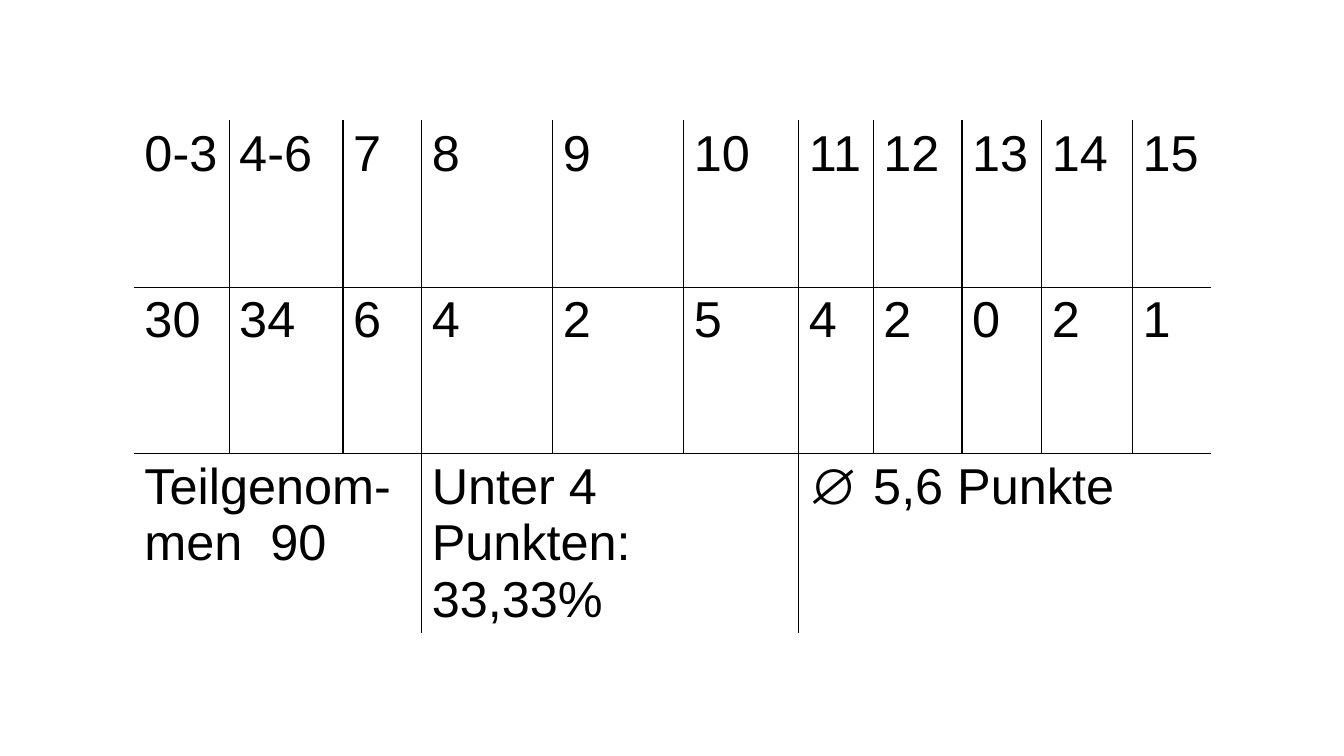
"""Build a slide with the table of points reached and its summary row."""
from lxml import etree
from pptx import Presentation
from pptx import util as u
from pptx.dml.color import RGBColor
from pptx.oxml.ns import qn

COLORS = {"ink": "000000", "paper": "FFFFFF"}
FONT = {"name": "Arial", "size": u.Pt(36), "bold": False}
ROWS = [
    [(points, 1) for points in "0-3 4-6 7 8 9 10 11 12 13 14 15".split()],
    [(count, 1) for count in "30 34 6 4 2 5 4 2 0 2 1".split()],
    [("Teilgenom-men  90", 3), ("Unter 4 Punkten:\n33,33%", 3), ("∅ 5,6 Punkte", 5)],
]
COLUMN_WIDTHS = [0.94, 1.13, 0.78, 1.3, 1.3, 1.14, 0.74, 0.88, 0.79, 0.9, 0.77]
ROW_HEIGHTS = [1.65, 1.65, 1.79]
SLIDE_WIDTH, SLIDE_HEIGHT = 13.33, 7.5
LEFT, TOP = SLIDE_WIDTH * 0.1, SLIDE_HEIGHT * 0.16


def set_borders(cell, inner_sides):
    properties = cell._tc.get_or_add_tcPr()
    for index, (side, inner) in enumerate(zip("LRTB", inner_sides)):
        line = etree.Element(qn(f"a:ln{side}"), w=str(u.Pt(1)))
        fill = etree.SubElement(line, qn("a:solidFill"))
        color = COLORS["ink" if inner else "paper"]
        etree.SubElement(fill, qn("a:srgbClr"), val=color)
        properties.insert(index, line)


def write_text(cell, content):
    cell.text = content
    for paragraph in cell.text_frame.paragraphs:
        for run in paragraph.runs:
            for name, value in FONT.items():
                setattr(run.font, name, value)
            run.font.color.rgb = RGBColor.from_string(COLORS["ink"])


def fill_row(table, row, entries):
    column = 0
    last_column, last_row = len(COLUMN_WIDTHS), len(ROWS) - 1
    for content, span in entries:
        end = column + span
        for position in range(column, end):
            cell = table.cell(row, position)
            cell.fill.solid()
            cell.fill.fore_color.rgb = RGBColor.from_string(COLORS["paper"])
            starts, ends = position == column, position in (column, end - 1)
            set_borders(cell, (starts and column > 0, ends and end < last_column,
                               row > 0, row < last_row))
        origin = table.cell(row, column)
        if span > 1:
            origin.merge(table.cell(row, end - 1))
        write_text(origin, content)
        column = end


def main():
    presentation = Presentation()
    presentation.slide_width = u.Inches(SLIDE_WIDTH)
    presentation.slide_height = u.Inches(SLIDE_HEIGHT)
    slide = presentation.slides.add_slide(presentation.slide_layouts[6])
    frame = slide.shapes.add_table(
        len(ROWS), len(COLUMN_WIDTHS), u.Inches(LEFT), u.Inches(TOP),
        u.Inches(sum(COLUMN_WIDTHS)), u.Inches(sum(ROW_HEIGHTS)))
    table = frame.table
    table.first_row = table.horz_banding = False
    for column, width in zip(table.columns, COLUMN_WIDTHS):
        column.width = u.Inches(width)
    for row, height in zip(table.rows, ROW_HEIGHTS):
        row.height = u.Inches(height)
    for row, entries in enumerate(ROWS):
        fill_row(table, row, entries)
    presentation.save("out.pptx")


if __name__ == "__main__":
    main()
